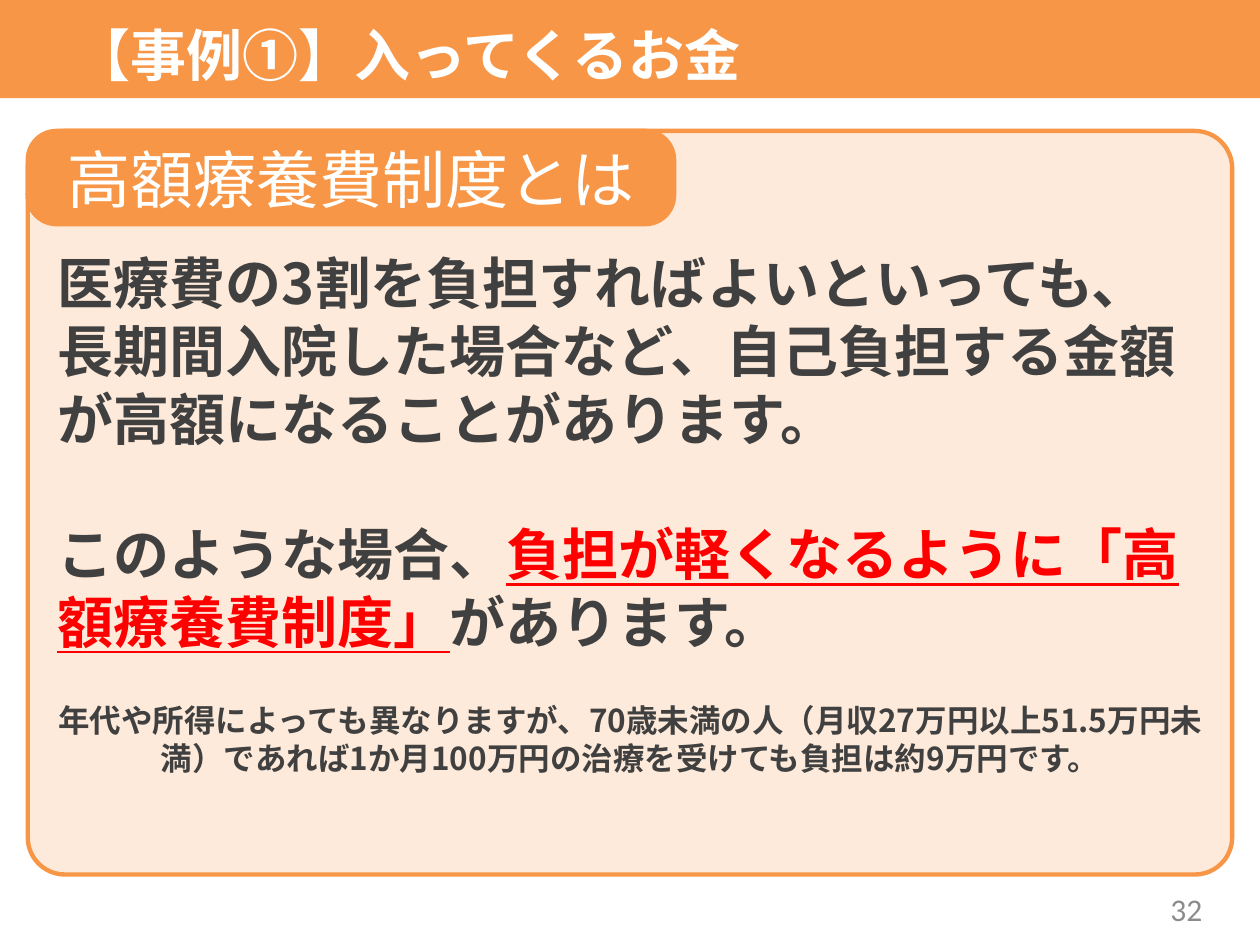
from pptx import Presentation
from pptx.dml.color import RGBColor
from pptx.enum.shapes import MSO_SHAPE
from pptx.enum.text import MSO_ANCHOR, MSO_AUTO_SIZE, PP_ALIGN
from pptx.oxml.ns import qn
from pptx.util import Cm, Pt
from lxml import etree

RECTANGLE, ROUNDED = MSO_SHAPE.RECTANGLE, MSO_SHAPE.ROUNDED_RECTANGLE
TOP, MIDDLE = MSO_ANCHOR.TOP, MSO_ANCHOR.MIDDLE
LEFT, CENTER, RIGHT = PP_ALIGN.LEFT, PP_ALIGN.CENTER, PP_ALIGN.RIGHT
NO_AUTOFIT = MSO_AUTO_SIZE.NONE

COLORS = {
    "accent": "F79646",
    "panel": "FDEADA",
    "white": "FFFFFF",
    "body": "404040",
    "alert": "FF0000",
    "number": "8C8C8C",
}
JAPANESE = "Noto Sans CJK JP"
LATIN = "Calibri"
LINE_RATIO = 1.21


def color(name):
    return RGBColor.from_string(COLORS[name])


def place(shape, left, top, width, height):
    shape.left, shape.top = Cm(left), Cm(top)
    shape.width, shape.height = Cm(width), Cm(height)


def add_panel(slide, kind, area, fill, line=None, corner=None):
    shape = slide.shapes.add_shape(kind, *map(Cm, area))
    shape.shadow.inherit = False
    shape.fill.solid()
    shape.fill.fore_color.rgb = color(fill)
    if line:
        shape.line.color.rgb = color(line)
        shape.line.width = Pt(2.5)
    else:
        shape.line.fill.background()
    if corner is not None:
        shape.adjustments[0] = corner
    return shape


def add_span(para, text, size, ink, font=JAPANESE, bold=False, underline=False):
    span = para.add_run()
    span.text = text
    span.font.size = Pt(size)
    span.font.name = font
    span.font.bold = bold
    span.font.underline = underline
    span.font.color.rgb = color(ink)
    east_asian = etree.Element(qn("a:ea"), typeface=font)
    span.font._element.find(qn("a:latin")).addnext(east_asian)


def write(shape, paragraphs, size, align=LEFT, anchor=TOP, gap=0, **style):
    """Fill a shape; each paragraph is a list of (text, ink, underline)."""
    frame = shape.text_frame
    frame.word_wrap = True
    frame.auto_size = NO_AUTOFIT
    frame.vertical_anchor = anchor
    for index, spans in enumerate(paragraphs):
        para = frame.add_paragraph() if index else frame.paragraphs[0]
        para.alignment = align
        para.line_spacing = Pt(size * LINE_RATIO)
        para.space_before = Pt(gap if index else 0)
        for text, ink, underline in spans:
            add_span(para, text, size, ink, underline=underline, **style)


def add_text(slide, area, paragraphs, size, **style):
    box = slide.shapes.add_textbox(*map(Cm, area))
    write(box, paragraphs, size, **style)


def add_header(slide):
    band = add_panel(slide, RECTANGLE, (0, 0, 25.4, 1.98), "accent")
    title = slide.shapes.title
    title.element.addprevious(band.element)
    place(title, 1.24, 0.08, 22.43, 2.01)
    write(title, [[("【事例①】入ってくるお金", "white", False)]], 32,
          anchor=MIDDLE, bold=True)


def add_explanation(slide):
    add_panel(slide, ROUNDED, (0.56, 2.64, 24.28, 14.99), "panel", "accent", 0.05)
    badge = add_panel(slide, ROUNDED, (0.56, 2.64, 13.03, 1.88),
                      "accent", "accent", 0.31)
    write(badge, [[("高額療養費制度とは", "white", False)]], 36,
          align=CENTER, anchor=MIDDLE)
    add_text(slide, (0.91, 4.88, 23.57, 8.46), [
        [("医療費の3割を負担すればよいといっても、長期間入院した場合など、"
          "自己負担する金額が高額になることがあります。", "body", False)],
        [("このような場合、", "body", False),
         ("負担が軽くなるように「高額療養費制度」", "alert", True),
         ("があります。", "body", False)],
    ], 32, gap=32 * LINE_RATIO, bold=True)
    add_text(slide, (0.74, 14, 23.93, 1.8), [
        [("年代や所得によっても異なりますが、70歳未満の人（月収27万円以上"
          "51.5万円未満）であれば1か月100万円の治療を受けても負担は約9万円です。",
          "body", False)],
    ], 18, align=CENTER, bold=True)


def main():
    deck = Presentation()
    deck.slide_width, deck.slide_height = Cm(25.4), Cm(19.05)
    page = deck.slides.add_slide(deck.slide_layouts.get_by_name("Title Only"))
    add_header(page)
    add_explanation(page)
    add_text(page, (18.57, 17.81, 5.92, 1.02), [[("32", "number", False)]], 18,
             align=RIGHT, anchor=MIDDLE, font=LATIN)
    deck.save("out.pptx")


if __name__ == "__main__":
    main()
